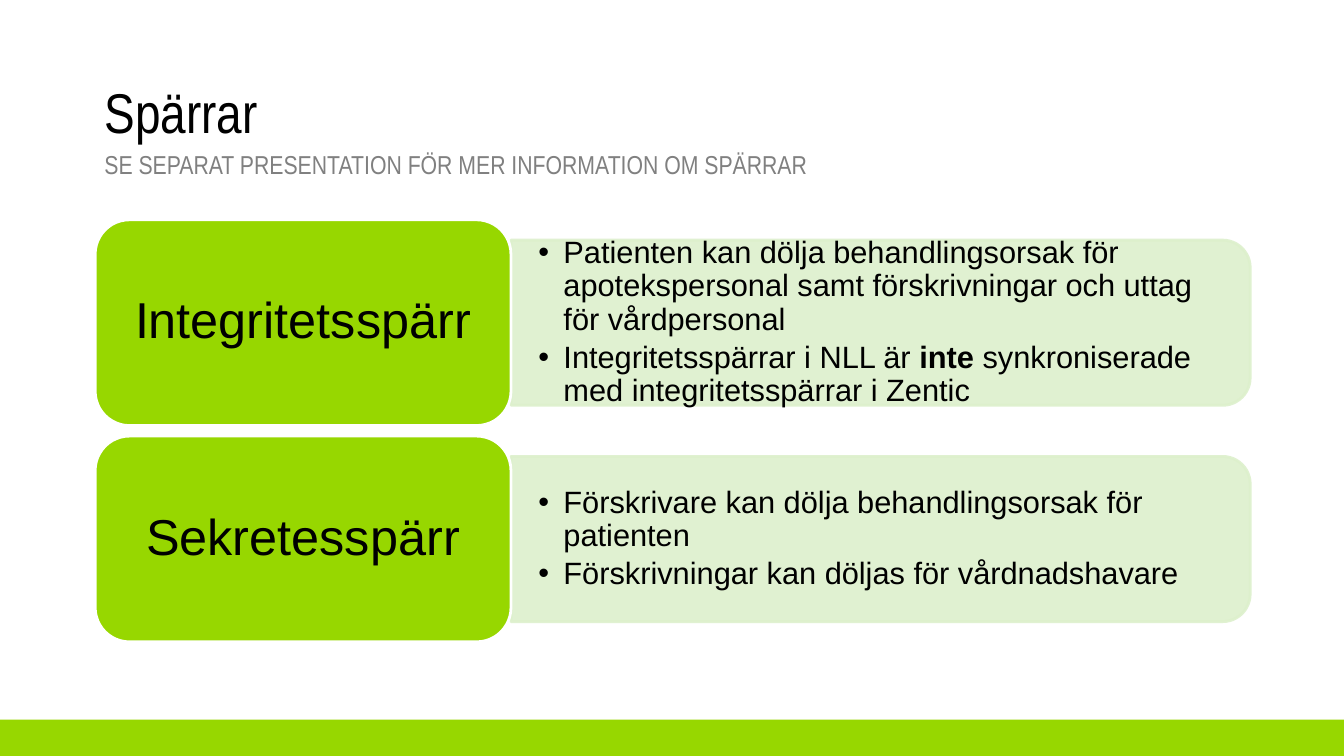
from lxml import etree
from pptx import Presentation
from pptx.dml.color import RGBColor
from pptx.enum.shapes import MSO_SHAPE
from pptx.enum.text import MSO_ANCHOR, PP_ALIGN
from pptx.oxml.ns import qn
from pptx.util import Pt

ROUNDED = MSO_SHAPE.ROUNDED_RECTANGLE
TWO_ROUNDED = MSO_SHAPE.ROUND_2_SAME_RECTANGLE
RECTANGLE = MSO_SHAPE.RECTANGLE
MIDDLE, TOP = MSO_ANCHOR.MIDDLE, MSO_ANCHOR.TOP
LEFT, CENTER = PP_ALIGN.LEFT, PP_ALIGN.CENTER
GREEN, PALE_GREEN, WHITE = "97D700", "DDF0CC", "FFFFFF"
BLACK, GREY = "000000", "808080"


def color(hex_value):
    return RGBColor.from_string(hex_value)


def format_paragraph(paragraph, size, font_name, hex_value, align=LEFT):
    paragraph.alignment = align
    paragraph.line_spacing = 0.9
    for run in paragraph.runs:
        run.font.size = Pt(size)
        run.font.name = font_name
        run.font.color.rgb = color(hex_value)


prs = Presentation()
prs.slide_width, prs.slide_height = Pt(960), Pt(540)
slide = prs.slides.add_slide(prs.slide_layouts[5])
shapes = slide.shapes

# Green band along the bottom
band = shapes.add_shape(RECTANGLE, Pt(0), Pt(514), Pt(960), Pt(26))
band.shadow.inherit = False
band.fill.solid()
band.fill.fore_color.rgb = color(GREEN)
band.line.fill.background()

# Title
title = shapes.title
title.left, title.top, title.width, title.height = Pt(67.5), Pt(57), Pt(824), Pt(51)
title.text_frame.text = "Spärrar"
title.text_frame.vertical_anchor = MIDDLE
format_paragraph(title.text_frame.paragraphs[0], 40, "Arial Narrow", BLACK)

# Subtitle
subtitle = shapes.add_textbox(Pt(67.5), Pt(105), Pt(824), Pt(29)).text_frame
subtitle.word_wrap = True
subtitle.vertical_anchor = TOP
subtitle.text = "SE SEPARAT PRESENTATION FÖR MER INFORMATION OM SPÄRRAR"
format_paragraph(subtitle.paragraphs[0], 18.5, "Arial Narrow", GREY)

# One row per block type: label and bullets, each bullet a list of (text, bold)
blocks = [
    ("Integritetsspärr", [
        [("Patienten kan dölja behandlingsorsak för apotekspersonal samt "
          "förskrivningar och uttag för vårdpersonal", False)],
        [("Integritetsspärrar i NLL är ", False), ("inte", True),
         (" synkroniserade med integritetsspärrar i Zentic", False)],
    ]),
    ("Sekretesspärr", [
        [("Förskrivare kan dölja behandlingsorsak för patienten", False)],
        [("Förskrivningar kan döljas för vårdnadshavare", False)],
    ]),
]
ROW_TOP, ROW_STEP, ROW_HEIGHT = 157, 154.5, 147
PANEL_LEFT, PANEL_WIDTH, PANEL_HEIGHT = 365, 528, 118

for row, (block_name, bullets) in enumerate(blocks):
    top = ROW_TOP + row * ROW_STEP
    middle = top + ROW_HEIGHT / 2

    # Pale panel, turned so that its rounded corners face right
    panel = shapes.add_shape(
        TWO_ROUNDED, Pt(PANEL_LEFT + (PANEL_WIDTH - PANEL_HEIGHT) / 2),
        Pt(middle - PANEL_WIDTH / 2), Pt(PANEL_HEIGHT), Pt(PANEL_WIDTH))
    panel.rotation = 90
    panel.shadow.inherit = False
    panel.fill.solid()
    panel.fill.fore_color.rgb = color(PALE_GREEN)
    panel.line.color.rgb = color(PALE_GREEN)
    panel.line.width = Pt(2)
    for solid in panel._element.spPr.iter(qn("a:srgbClr")):
        etree.SubElement(solid, qn("a:alpha"), val="90000")

    # Bullets
    details = shapes.add_textbox(
        Pt(PANEL_LEFT), Pt(middle - 53), Pt(522), Pt(106)).text_frame
    details.word_wrap = True
    details.vertical_anchor = MIDDLE
    details.margin_left = details.margin_right = Pt(19.5)
    details.margin_top = details.margin_bottom = Pt(10)
    for i, pieces in enumerate(bullets):
        paragraph = details.add_paragraph() if i else details.paragraphs[0]
        properties = paragraph._p.get_or_add_pPr()
        properties.set("marL", str(Pt(18)))
        properties.set("indent", str(Pt(-18)))
        etree.SubElement(properties, qn("a:buFont"), typeface="Arial")
        etree.SubElement(properties, qn("a:buChar"), char="•")
        for text, bold in pieces:
            run = paragraph.add_run()
            run.text = text
            run.font.bold = bold
        format_paragraph(paragraph, 22, "Arial", BLACK)
        paragraph.space_after = Pt(3.5)

    # Green label
    label = shapes.add_shape(ROUNDED, Pt(68), Pt(top), Pt(297), Pt(ROW_HEIGHT))
    label.shadow.inherit = False
    label.fill.solid()
    label.fill.fore_color.rgb = color(GREEN)
    label.line.color.rgb = color(WHITE)
    label.line.width = Pt(2)
    label.text_frame.word_wrap = True
    label.text_frame.vertical_anchor = MIDDLE
    label.text_frame.text = block_name
    format_paragraph(label.text_frame.paragraphs[0], 36, "Arial", BLACK, CENTER)

prs.save("out.pptx")
